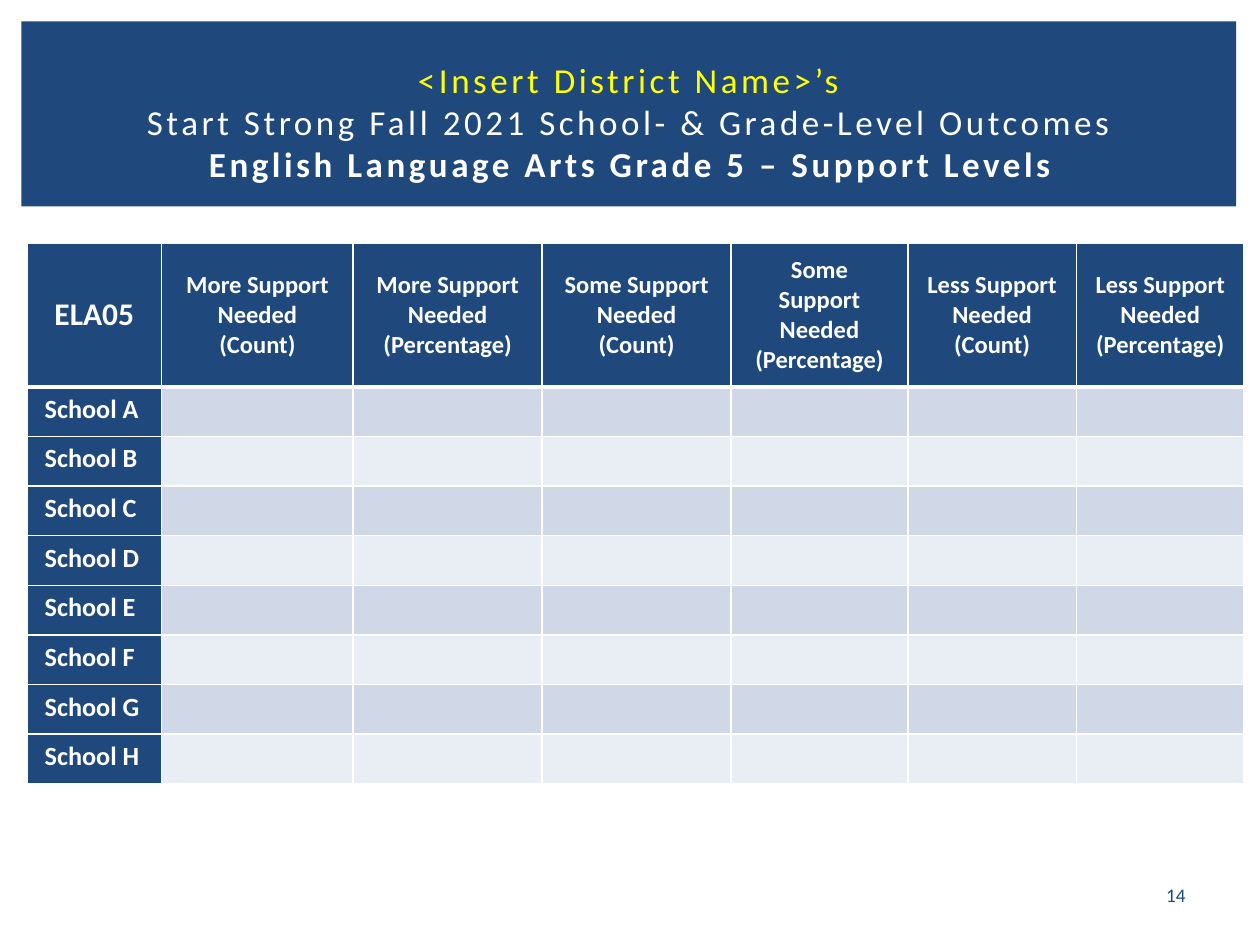
from dataclasses import dataclass

from lxml import etree
from pptx import Presentation
from pptx.dml.color import RGBColor
from pptx.enum import shapes, text
from pptx.oxml.ns import qn
from pptx.util import Cm, Pt


@dataclass(frozen=True)
class Theme:
    font: str = "Calibri"
    navy: str = "1F497D"
    white: str = "FFFFFF"
    yellow: str = "FFFF00"
    bands: tuple = ("D0D8E8", "E9EDF4")
    title_size: int = 20
    corner_size: int = 18
    header_size: int = 14
    school_size: int = 15
    number_size: int = 11
    title_spacing: int = 2
    rule: int = 1
    header_rule: int = 3


THEME = Theme()

HEADERS = [["ELA05"]] + [
    [f"{level} Support Needed", f"({measure})"]
    for level in ("More", "Some", "Less")
    for measure in ("Count", "Percentage")
]
SCHOOLS = [f"School {letter}" for letter in "ABCDEFGH"]
COLUMN_WIDTHS = [2.72, 3.86, 3.81, 3.81, 3.56, 3.4, 3.38]
HEADER_HEIGHT = 2.9
SCHOOL_HEIGHT = 1.0


def format_run(run, size, color, bold=False):
    run.font.name = THEME.font
    run.font.size = Pt(size)
    run.font.bold = bold
    run.font.color.rgb = RGBColor.from_string(color)


def add_banner(slide, left, top, width, height):
    band = slide.shapes.add_shape(
        shapes.MSO_SHAPE.RECTANGLE, Cm(left), Cm(top), Cm(width), Cm(height)
    )
    band.shadow.inherit = False
    band.fill.solid()
    band.fill.fore_color.rgb = RGBColor.from_string(THEME.navy)
    band.line.fill.background()
    slide.shapes.element.insert(2, band.element)

    title = slide.shapes.title
    title.left, title.top = Cm(left + 0.28), Cm(top + 0.56)
    title.width, title.height = Cm(width - 0.5), Cm(height - 0.81)
    title.text_frame.text = (
        "<Insert District Name>’s\v"
        "Start Strong Fall 2021 School- & Grade-Level Outcomes\v"
        "English Language Arts Grade 5 – Support Levels"
    )
    title.text_frame.vertical_anchor = text.MSO_ANCHOR.MIDDLE
    heading = title.text_frame.paragraphs[0]
    heading.alignment = text.PP_ALIGN.CENTER
    styles = [(THEME.yellow, False), (THEME.white, False), (THEME.white, True)]
    for run, (color, bold) in zip(heading.runs, styles):
        format_run(run, THEME.title_size, color, bold)
        run.font._element.set("spc", str(THEME.title_spacing * 100))
    for line_break in heading._p.findall(qn("a:br")):
        etree.SubElement(line_break, qn("a:rPr"), sz=str(THEME.title_size * 100))


def style_cell(cell, fill, bottom_rule=THEME.rule, top_rule=THEME.rule):
    properties = cell._tc.get_or_add_tcPr()
    rules = {"lnL": THEME.rule, "lnR": THEME.rule, "lnT": top_rule, "lnB": bottom_rule}
    for side, weight in rules.items():
        border = etree.SubElement(properties, qn(f"a:{side}"), w=str(Pt(weight)))
        paint = etree.SubElement(border, qn("a:solidFill"))
        etree.SubElement(paint, qn("a:srgbClr"), val=THEME.white)
    cell.fill.solid()
    cell.fill.fore_color.rgb = RGBColor.from_string(fill)
    cell.margin_left = cell.margin_right = Cm(0.36)
    cell.margin_top = cell.margin_bottom = Cm(0.13) if cell.text else 0


def write_cell(cell, lines, size, alignment, anchor):
    cell.text_frame.text = "\n".join(lines)
    cell.vertical_anchor = anchor
    for paragraph in cell.text_frame.paragraphs:
        paragraph.alignment = alignment
        for run in paragraph.runs:
            format_run(run, size, THEME.white, True)


def add_support_table(slide, left, top):
    height = HEADER_HEIGHT + SCHOOL_HEIGHT * len(SCHOOLS)
    support = slide.shapes.add_table(
        len(SCHOOLS) + 1, len(HEADERS),
        Cm(left), Cm(top), Cm(sum(COLUMN_WIDTHS)), Cm(height),
    ).table
    support.horz_banding = False
    for column, width in zip(support.columns, COLUMN_WIDTHS):
        column.width = Cm(width)
    for index, row in enumerate(support.rows):
        row.height = Cm(SCHOOL_HEIGHT if index else HEADER_HEIGHT)

    for column, lines in enumerate(HEADERS):
        header = support.cell(0, column)
        size = THEME.header_size if column else THEME.corner_size
        write_cell(header, lines, size, text.PP_ALIGN.CENTER, text.MSO_ANCHOR.MIDDLE)
        style_cell(header, THEME.navy, bottom_rule=THEME.header_rule)

    for index, name in enumerate(SCHOOLS):
        top_rule = THEME.rule if index else THEME.header_rule
        school = support.cell(index + 1, 0)
        write_cell(school, [name], THEME.school_size,
                   text.PP_ALIGN.LEFT, text.MSO_ANCHOR.TOP)
        style_cell(school, THEME.navy, top_rule=top_rule)
        for column in range(1, len(HEADERS)):
            style_cell(support.cell(index + 1, column),
                       THEME.bands[index % 2], top_rule=top_rule)


def add_page_number(slide, left, top, width, height):
    number = slide.shapes.add_textbox(Cm(left), Cm(top), Cm(width), Cm(height))
    frame = number.text_frame
    frame.text = "14"
    frame.word_wrap = True
    frame.vertical_anchor = text.MSO_ANCHOR.MIDDLE
    frame.paragraphs[0].alignment = text.PP_ALIGN.CENTER
    format_run(frame.paragraphs[0].runs[0], THEME.number_size, THEME.navy)


def main():
    deck = Presentation()
    deck.slide_width, deck.slide_height = Cm(25.4), Cm(19.05)
    slide = deck.slides.add_slide(deck.slide_layouts[5])
    add_banner(slide, 0.43, 0.43, 24.49, 3.73)
    add_support_table(slide, 0.54, 4.9)
    add_page_number(slide, 22.89, 17.65, 1.63, 0.76)
    deck.save("out.pptx")


if __name__ == "__main__":
    main()
